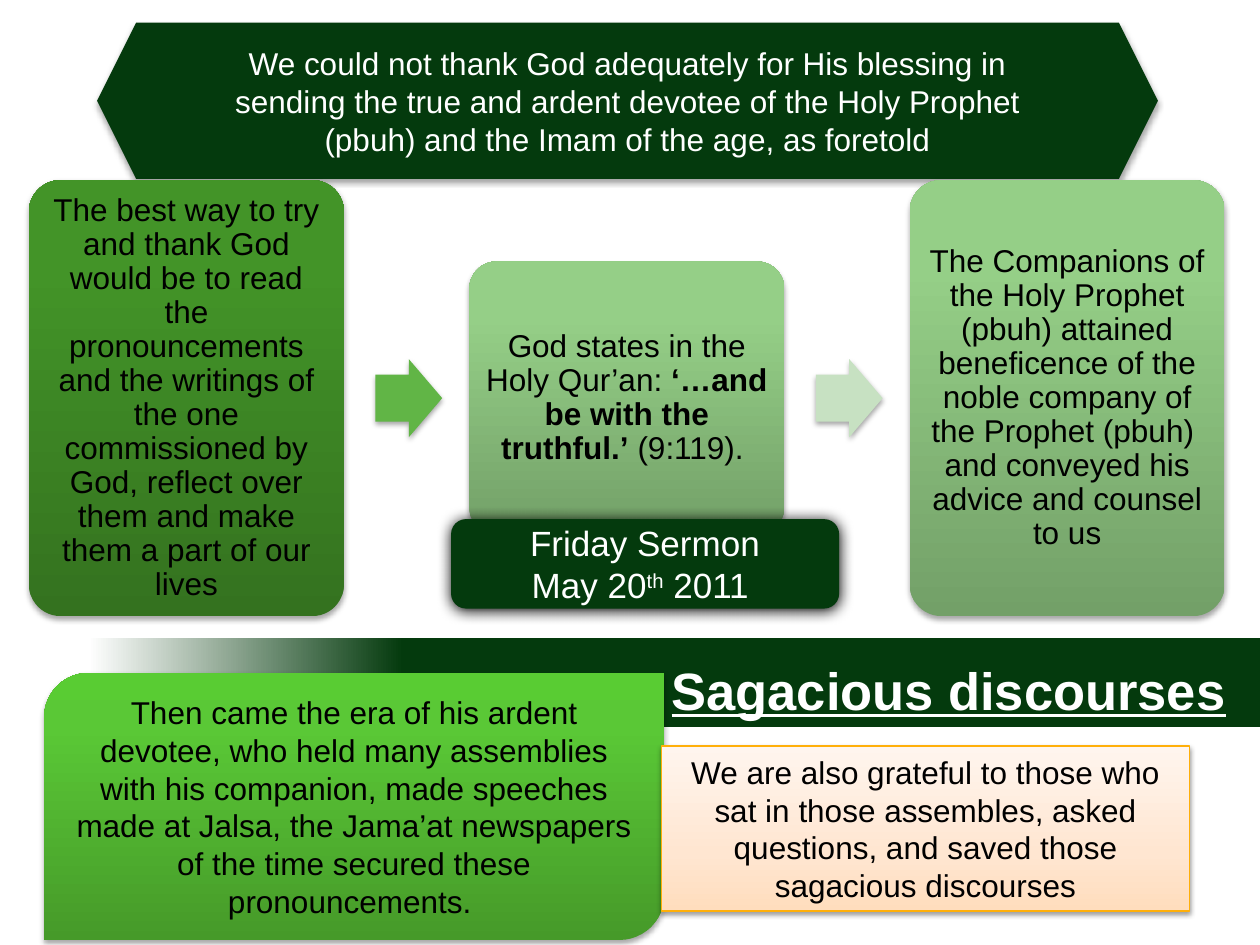
import pptx
import pptx.dml.color
import pptx.enum.shapes
import pptx.enum.text
import pptx.oxml.ns
import pptx.util
from lxml import etree

SHAPES = pptx.enum.shapes.MSO_SHAPE
ALIGN = pptx.enum.text.PP_ALIGN
ANCHOR = pptx.enum.text.MSO_ANCHOR

SLIDE_WIDTH, SLIDE_HEIGHT = pptx.util.Inches(10), pptx.util.Inches(7.5)
COLUMNS, ROWS = 100, 75

COLORS = {
    "deep green": "043A0D",
    "arrow green": "61B546",
    "arrow pale": "C7E1C2",
    "orange": "FFAF09",
    "white": "FFFFFF",
    "black": "000000",
}
UPWARD = 270
# Gradient stops as (percent, colour)
BAR_STOPS = [(7, COLORS["white"]), (32, COLORS["deep green"])]
BRIGHT_STOPS = [(0, "469A29"), (80, "5AC836"), (100, "59CC33")]
DARK_STOPS = [(0, "34721F"), (80, "439428"), (100, "429726")]
PALE_STOPS = [(0, "73A068"), (80, "95CF87"), (100, "95D286")]
PEACH_STOPS = [(0, "FFDDBD"), (35, "FFE6D1"), (100, "FFF5EE")]

# Shadows as (opacity percent, blur points, distance points)
SOFT_SHADOW = (35, 3.1, 1.8)
PANEL_SHADOW = (38, 3.1, 1.6)
GLOW_SHADOW = (100, 8.5, 1)

CARD_WIDTH, CARD_STEP, CARD_MIDDLE = 25, 34.95, 31.6
CARDS = [
    (34.6, DARK_STOPS, [("The best way to try and thank God would be to read the pronouncements "
                         "and the writings of the one commissioned by God, reflect over them "
                         "and make them a part of our lives", "")]),
    (21.7, PALE_STOPS, [("God states in the Holy Qur’an: ", ""),
                        ("‘…and be with the truthful.’", "bold"),
                        (" (9:119). ", "")]),
    (34.6, PALE_STOPS, [("The Companions of the Holy Prophet (pbuh) attained beneficence of the "
                         "noble company of the Prophet (pbuh)  and conveyed his advice and "
                         "counsel to us", "")]),
]


def cells(left, top, width, height):
    """Turn grid columns and rows into slide lengths."""
    column, row = SLIDE_WIDTH / COLUMNS, SLIDE_HEIGHT / ROWS
    return int(left * column), int(top * row), int(width * column), int(height * row)


def add_child(parent, tag, **attributes):
    child = etree.SubElement(parent, pptx.oxml.ns.qn(tag))
    for name, value in attributes.items():
        child.set(name, str(value))
    return child


def fill_gradient(shape, stops, angle):
    shape.fill.gradient()
    gradient = shape._element.spPr.find(pptx.oxml.ns.qn("a:gradFill"))
    for child in list(gradient):
        gradient.remove(child)
    stop_list = add_child(gradient, "a:gsLst")
    for position, color in stops:
        stop = add_child(stop_list, "a:gs", pos=position * 1000)
        add_child(stop, "a:srgbClr", val=color)
    add_child(gradient, "a:lin", ang=angle * 60000, scaled=0)


def cast_shadow(shape, opacity, blur, distance):
    effects = shape._element.spPr.find(pptx.oxml.ns.qn("a:effectLst"))
    shadow = add_child(effects, "a:outerShdw", blurRad=pptx.util.Pt(blur),
                       dist=pptx.util.Pt(distance), dir=90 * 60000, rotWithShape=0)
    color = add_child(shadow, "a:srgbClr", val=COLORS["black"])
    add_child(color, "a:alpha", val=opacity * 1000)


def add_block(slide, kind, box, fill, angle=UPWARD, shadow=SOFT_SHADOW, line=None):
    """Add a preset shape; fill is one colour or a list of gradient stops."""
    shape = slide.shapes.add_shape(kind, *cells(*box))
    shape.shadow.inherit = False
    if isinstance(fill, str):
        shape.fill.solid()
        shape.fill.fore_color.rgb = pptx.dml.color.RGBColor.from_string(fill)
    else:
        fill_gradient(shape, fill, angle)
    if line:
        shape.line.color.rgb = pptx.dml.color.RGBColor.from_string(line)
        shape.line.width = pptx.util.Pt(0.75)
    else:
        shape.line.fill.background()
    if shadow:
        cast_shadow(shape, *shadow)
    return shape


def write_text(shape, paragraphs, color, size=18, align=ALIGN.CENTER, spacing=None):
    """Write paragraphs, each a list of (text, style) runs."""
    frame = shape.text_frame
    frame.word_wrap = True
    frame.vertical_anchor = ANCHOR.MIDDLE
    for index, runs in enumerate(paragraphs):
        paragraph = frame.add_paragraph() if index else frame.paragraphs[0]
        paragraph.alignment = align
        if spacing:
            paragraph.line_spacing = spacing
        for text, style in runs:
            run = paragraph.add_run()
            run.text = text
            run.font.name = "Arial"
            run.font.size = pptx.util.Pt(size)
            run.font.color.rgb = pptx.dml.color.RGBColor.from_string(color)
            run.font.bold = "bold" in style
            run.font.underline = "underline" in style
            if "superscript" in style:
                run._r.get_or_add_rPr().set("baseline", "30000")
    return frame


def set_margins(frame, horizontal, vertical):
    frame.margin_left = frame.margin_right = pptx.util.Inches(horizontal)
    frame.margin_top = frame.margin_bottom = pptx.util.Inches(vertical)


def add_cards(slide):
    for index, (height, stops, runs) in enumerate(CARDS):
        box = (2.3 + index * CARD_STEP, CARD_MIDDLE - height / 2, CARD_WIDTH, height)
        card = add_block(slide, SHAPES.ROUNDED_RECTANGLE, box, stops)
        card.adjustments[0] = 0.1
        frame = write_text(card, [runs], COLORS["black"], spacing=0.9)
        set_margins(frame, 0.07, 0.07)


def add_arrows(slide):
    for index, name in enumerate(("arrow green", "arrow pale")):
        box = (29.8 + index * CARD_STEP, CARD_MIDDLE - 3.1, 5.3, 6.2)
        arrow = add_block(slide, SHAPES.RIGHT_ARROW, box, COLORS[name])
        arrow.adjustments[0] = 0.6


def add_title(slide):
    title = slide.shapes.add_textbox(*cells(28.1, 51.7, 69.2, 6.2))
    frame = write_text(title, [[("Sagacious discourses", "bold underline")]],
                       COLORS["white"], size=30, align=ALIGN.RIGHT)
    frame.vertical_anchor = ANCHOR.TOP
    set_margins(frame, 0, 0.05)


def main():
    presentation = pptx.Presentation()
    presentation.slide_width, presentation.slide_height = SLIDE_WIDTH, SLIDE_HEIGHT
    slide = presentation.slides.add_slide(presentation.slide_layouts[6])

    add_block(slide, SHAPES.RECTANGLE, (0, 50.6, COLUMNS, 7.1), BAR_STOPS, angle=0, shadow=None)
    era = add_block(slide, SHAPES.ROUND_2_DIAG_RECTANGLE, (3.5, 53.4, 49.2, 21.2), BRIGHT_STOPS)
    write_text(era, [[("Then came the era of his ardent devotee, who held many assemblies with "
                       "his companion, made speeches made at Jalsa, the Jama’at newspapers of "
                       "the time secured these pronouncements. ", "")]], COLORS["black"])
    banner = add_block(slide, SHAPES.HEXAGON, (7.7, 1.8, 84.2, 12.4), COLORS["deep green"])
    write_text(banner, [[("We could not thank God adequately for His blessing in sending the true "
                          "and ardent devotee of the Holy Prophet (pbuh) and the Imam of the age, "
                          "as foretold", "")]], COLORS["white"])
    add_cards(slide)
    add_arrows(slide)
    add_title(slide)
    thanks = add_block(slide, SHAPES.RECTANGLE, (52.5, 59.2, 41.9, 13.1), PEACH_STOPS,
                       shadow=PANEL_SHADOW, line=COLORS["orange"])
    write_text(thanks, [[("We are also grateful to those who sat in those assembles, asked "
                          "questions, and saved those sagacious discourses", "")]],
               COLORS["black"])
    sermon = add_block(slide, SHAPES.ROUNDED_RECTANGLE, (35.8, 41.2, 30.8, 7.1),
                       COLORS["deep green"], shadow=GLOW_SHADOW)
    write_text(sermon, [[("Friday Sermon", "")],
                        [("May 20", ""), ("th", "superscript"), (" 2011 ", "")]],
               COLORS["white"], size=20)
    presentation.save("out.pptx")


if __name__ == "__main__":
    main()
